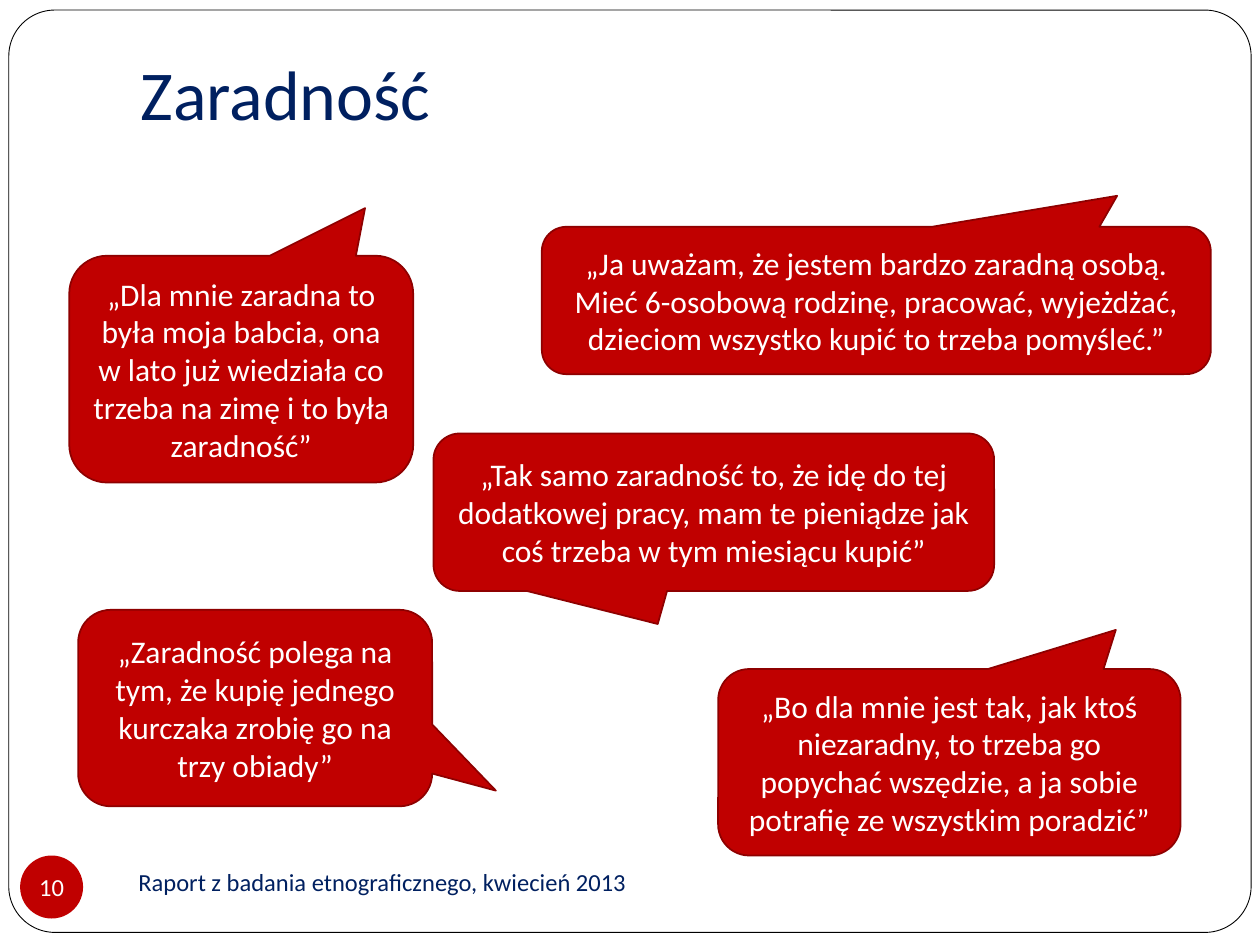
from typing import NamedTuple

from pptx import Presentation
from pptx.dml.color import RGBColor
from pptx.enum.shapes import MSO_SHAPE
from pptx.enum.text import MSO_ANCHOR, PP_ALIGN
from pptx.util import Inches, Pt

NAVY = RGBColor(0x00, 0x20, 0x60)
RED = RGBColor(0xC0, 0x00, 0x00)
DARK_RED = RGBColor(0x8E, 0x00, 0x00)
WHITE = RGBColor(0xFF, 0xFF, 0xFF)
BLACK = RGBColor(0x00, 0x00, 0x00)

ROUNDED = MSO_SHAPE.ROUNDED_RECTANGLE
CALLOUT = MSO_SHAPE.ROUNDED_RECTANGULAR_CALLOUT
OVAL = MSO_SHAPE.OVAL
MIDDLE, BOTTOM = MSO_ANCHOR.MIDDLE, MSO_ANCHOR.BOTTOM
LEFT, CENTER = PP_ALIGN.LEFT, PP_ALIGN.CENTER

FONT = "Calibri"
WIDTH, HEIGHT = Inches(10), Inches(7.5)
COLUMNS, ROWS = 100, 75


class Box(NamedTuple):
    """A place on the slide, in grid columns and rows."""
    column: float
    row: float
    columns: float
    rows: float

    def lengths(self) -> tuple[int, int, int, int]:
        return (round(self.column * WIDTH / COLUMNS), round(self.row * HEIGHT / ROWS),
                round(self.columns * WIDTH / COLUMNS), round(self.rows * HEIGHT / ROWS))


class Quote(NamedTuple):
    """A speech bubble; tip is the pointer's offset from the centre, as shares of its size."""
    box: Box
    tip: tuple[float, float]
    text: str


UPPER_RIGHT = (0.36, -0.71)
QUOTES = [
    Quote(Box(6.2, 48.4, 28.1, 15.6), (0.68, 0.42),
          "„Zaradność polega na tym, że kupię jednego kurczaka zrobię go na trzy obiady”"),
    Quote(Box(57, 53.1, 36.7, 14.8), UPPER_RIGHT,
          "„Bo dla mnie jest tak, jak ktoś niezaradny, to trzeba go popychać wszędzie, "
          "a ja sobie potrafię ze wszystkim poradzić”"),
    Quote(Box(5.5, 20.3, 27.3, 18), UPPER_RIGHT,
          "„Dla mnie zaradna to była moja babcia, ona w lato już wiedziała co trzeba "
          "na zimę i to była zaradność”"),
    Quote(Box(43, 18, 53.1, 11.7), UPPER_RIGHT,
          "„Ja uważam, że jestem bardzo zaradną osobą. Mieć 6-osobową rodzinę, pracować, "
          "wyjeżdżać, dzieciom wszystko kupić to trzeba pomyśleć.”"),
    Quote(Box(34.4, 34.4, 44.5, 12.5), (-0.1, 0.71),
          "„Tak samo zaradność to, że idę do tej dodatkowej pracy, mam te pieniądze "
          "jak coś trzeba w tym miesiącu kupić”"),
]


def write(shape, text: str, size: float, color: RGBColor,
          alignment=CENTER, anchor=MIDDLE, wrap: bool = True) -> None:
    frame = shape.text_frame
    frame.word_wrap = wrap
    frame.vertical_anchor = anchor
    paragraph = frame.paragraphs[0]
    paragraph.text = text
    paragraph.alignment = alignment
    paragraph.font.name = FONT
    paragraph.font.size = Pt(size)
    paragraph.font.color.rgb = color


def add_panel(slide, kind, box: Box, fill: RGBColor,
              line: RGBColor | None = None, line_width: float = 1):
    shape = slide.shapes.add_shape(kind, *box.lengths())
    shape.shadow.inherit = False
    shape.fill.solid()
    shape.fill.fore_color.rgb = fill
    if line is None:
        shape.line.fill.background()
    else:
        shape.line.color.rgb = line
        shape.line.width = Pt(line_width)
    return shape


def add_label(slide, box: Box, text: str, size: float, anchor=MIDDLE):
    label = slide.shapes.add_textbox(*box.lengths())
    write(label, text, size, NAVY, LEFT, anchor)
    return label


def add_page_number(slide, box: Box, number: str) -> None:
    badge = add_panel(slide, OVAL, box, RED)
    write(badge, number, 14, WHITE, wrap=False)
    frame = badge.text_frame
    frame.margin_left = frame.margin_right = frame.margin_top = frame.margin_bottom = 0


def add_quote(slide, quote: Quote) -> None:
    bubble = add_panel(slide, CALLOUT, quote.box, RED, DARK_RED)
    bubble.adjustments[0], bubble.adjustments[1] = quote.tip
    write(bubble, quote.text, 18, WHITE)


def main() -> None:
    presentation = Presentation()
    presentation.slide_width, presentation.slide_height = WIDTH, HEIGHT
    slide = presentation.slides.add_slide(presentation.slide_layouts[6])

    border = add_panel(slide, ROUNDED, Box(0.7, 0.8, 98.6, 73.2), WHITE, BLACK, 0.5)
    border.adjustments[0] = 0.05
    title = add_label(slide, Box(10.2, -0.6, 87.5, 12.3), "Zaradność", 40, BOTTOM)
    title.text_frame.margin_bottom = Inches(0.1)
    add_label(slide, Box(10, 67.5, 43.3, 5),
              "Raport z badania etnograficznego, kwiecień 2013", 14)
    add_page_number(slide, Box(1.6, 67.9, 5, 5), "10")
    for quote in QUOTES:
        add_quote(slide, quote)

    presentation.save("out.pptx")


if __name__ == "__main__":
    main()
